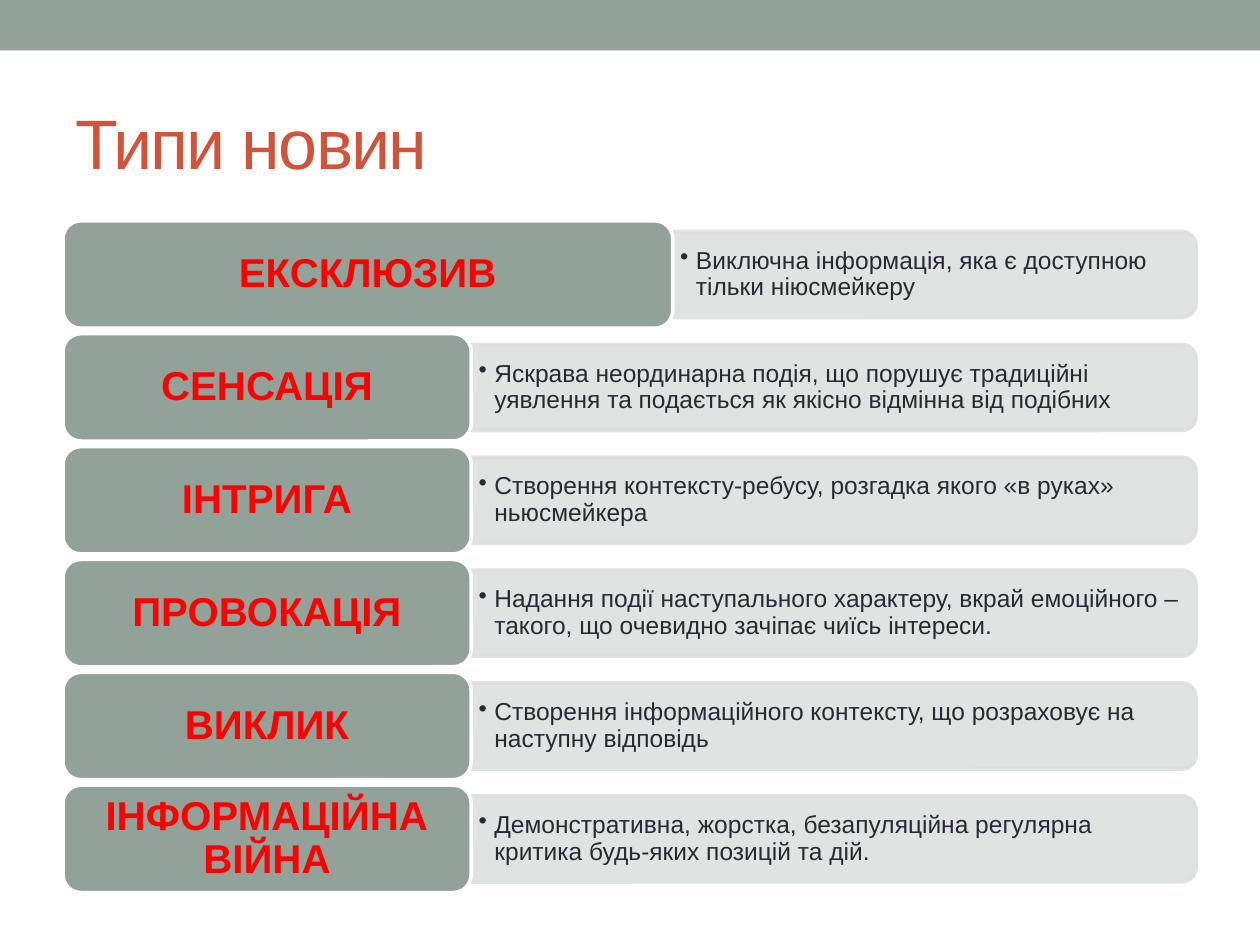
from lxml import etree
from pptx import Presentation
from pptx.dml.color import RGBColor
from pptx.enum import shapes, text
from pptx.oxml.ns import qn
from pptx.util import Pt

NEWS_TYPES = [
    ("ЕКСКЛЮЗИВ", "Виключна інформація, яка є доступною тільки ніюсмейкеру"),
    ("СЕНСАЦІЯ", "Яскрава неординарна подія, що порушує традиційні уявлення "
                 "та подається як якісно відмінна від подібних"),
    ("ІНТРИГА", "Створення контексту-ребусу, розгадка якого «в руках» ньюсмейкера"),
    ("ПРОВОКАЦІЯ", "Надання події наступального характеру, вкрай емоційного – "
                   "такого, що очевидно зачіпає чиїсь інтереси."),
    ("ВИКЛИК", "Створення інформаційного контексту, що розраховує на наступну відповідь"),
    ("ІНФОРМАЦІЙНА ВІЙНА", "Демонстративна, жорстка, безапуляційна регулярна "
                           "критика будь-яких позицій та дій."),
]
LEFT, RIGHT = 36, 683.5
FIRST_TOP, ROW_PITCH = 126.2, 64.5
LABEL_HEIGHT, BAR_HEIGHT = 61.4, 49.2
WIDE_LABEL, LABEL = 348.5, 233.3
BAR_MARGIN = 2.4


def color(value):
    return RGBColor.from_string(value)


class SlideBuilder:
    font = "Arial"
    sage, pale, white = "93A299", "DCE0DE", "FFFFFF"
    dark, red, rust = "292934", "FF0000", "D2533C"

    def __init__(self, slide):
        self.slide = slide

    def set_text(self, shape, content, size, hue, alignment, margins=(7.2, 3.6), bold=False):
        frame = shape.text_frame
        frame.text = content
        frame.word_wrap = True
        frame.auto_size = text.MSO_AUTO_SIZE.NONE
        frame.vertical_anchor = text.MSO_ANCHOR.MIDDLE
        frame.margin_left = frame.margin_right = Pt(margins[0])
        frame.margin_top = frame.margin_bottom = Pt(margins[1])
        paragraph = frame.paragraphs[0]
        paragraph.alignment = alignment
        font = paragraph.runs[0].font
        font.name, font.size, font.bold = self.font, Pt(size), bold
        font.color.rgb = color(hue)
        return paragraph

    def block(self, kind, left, top, width, height, fill, line=None):
        shape = self.slide.shapes.add_shape(kind, Pt(left), Pt(top), Pt(width), Pt(height))
        shape.shadow.inherit = False
        shape.fill.solid()
        shape.fill.fore_color.rgb = color(fill)
        if line:
            shape.line.color.rgb = color(line)
            shape.line.width = Pt(2.08)
        else:
            shape.line.fill.background()
        return shape

    def title(self, content):
        title = self.slide.shapes.title
        title.left, title.top, title.width, title.height = Pt(36), Pt(42), Pt(648), Pt(78)
        paragraph = self.set_text(title, content, 40, self.rust, text.PP_ALIGN.LEFT)
        paragraph.runs[0]._r.get_or_add_rPr().set("spc", "-100")

    def bar(self, left, top, width):
        """Draw a bar rounded on the right only: an upright shape turned by 90 degrees."""
        shape = self.block(shapes.MSO_SHAPE.ROUND_2_SAME_RECTANGLE,
                           left + (width - BAR_HEIGHT) / 2, top + (BAR_HEIGHT - width) / 2,
                           BAR_HEIGHT, width, self.pale, self.pale)
        shape.rotation = 90
        for hue in shape._element.spPr.iter(qn("a:srgbClr")):
            etree.SubElement(hue, qn("a:alpha"), val="90000")

    def description(self, left, top, width, content):
        box = self.slide.shapes.add_textbox(
            Pt(left), Pt(top + BAR_MARGIN),
            Pt(width - BAR_MARGIN), Pt(BAR_HEIGHT - 2 * BAR_MARGIN))
        paragraph = self.set_text(box, content, 14, self.dark, text.PP_ALIGN.LEFT, (4.2, 2.1))
        paragraph.line_spacing = 0.9
        properties = paragraph._p.get_or_add_pPr()
        properties.set("marL", str(Pt(9)))
        properties.set("indent", str(-Pt(9)))
        etree.SubElement(properties, qn("a:buChar"), char="•")

    def label(self, top, width, content):
        shape = self.block(shapes.MSO_SHAPE.ROUNDED_RECTANGLE, LEFT, top,
                           width, LABEL_HEIGHT, self.sage, self.white)
        paragraph = self.set_text(shape, content, 23, self.red, text.PP_ALIGN.CENTER,
                                  (10.2, 6.6), bold=True)
        paragraph.line_spacing = 0.9

    def row(self, index, name, meaning):
        top = FIRST_TOP + index * ROW_PITCH
        label_width = LABEL if index else WIDE_LABEL
        bar_left = LEFT + label_width
        bar_top = top + (LABEL_HEIGHT - BAR_HEIGHT) / 2
        self.bar(bar_left, bar_top, RIGHT - bar_left)
        self.description(bar_left, bar_top, RIGHT - bar_left, meaning)
        self.label(top, label_width, name)


def main():
    presentation = Presentation()
    presentation.slide_width, presentation.slide_height = Pt(720), Pt(540)
    title_only = presentation.slide_layouts[5]
    builder = SlideBuilder(presentation.slides.add_slide(title_only))
    builder.block(shapes.MSO_SHAPE.RECTANGLE, 0, 0, 720, 28.8, builder.sage)
    builder.title("Типи новин")
    for index, (name, meaning) in enumerate(NEWS_TYPES):
        builder.row(index, name, meaning)
    presentation.save("out.pptx")


if __name__ == "__main__":
    main()
